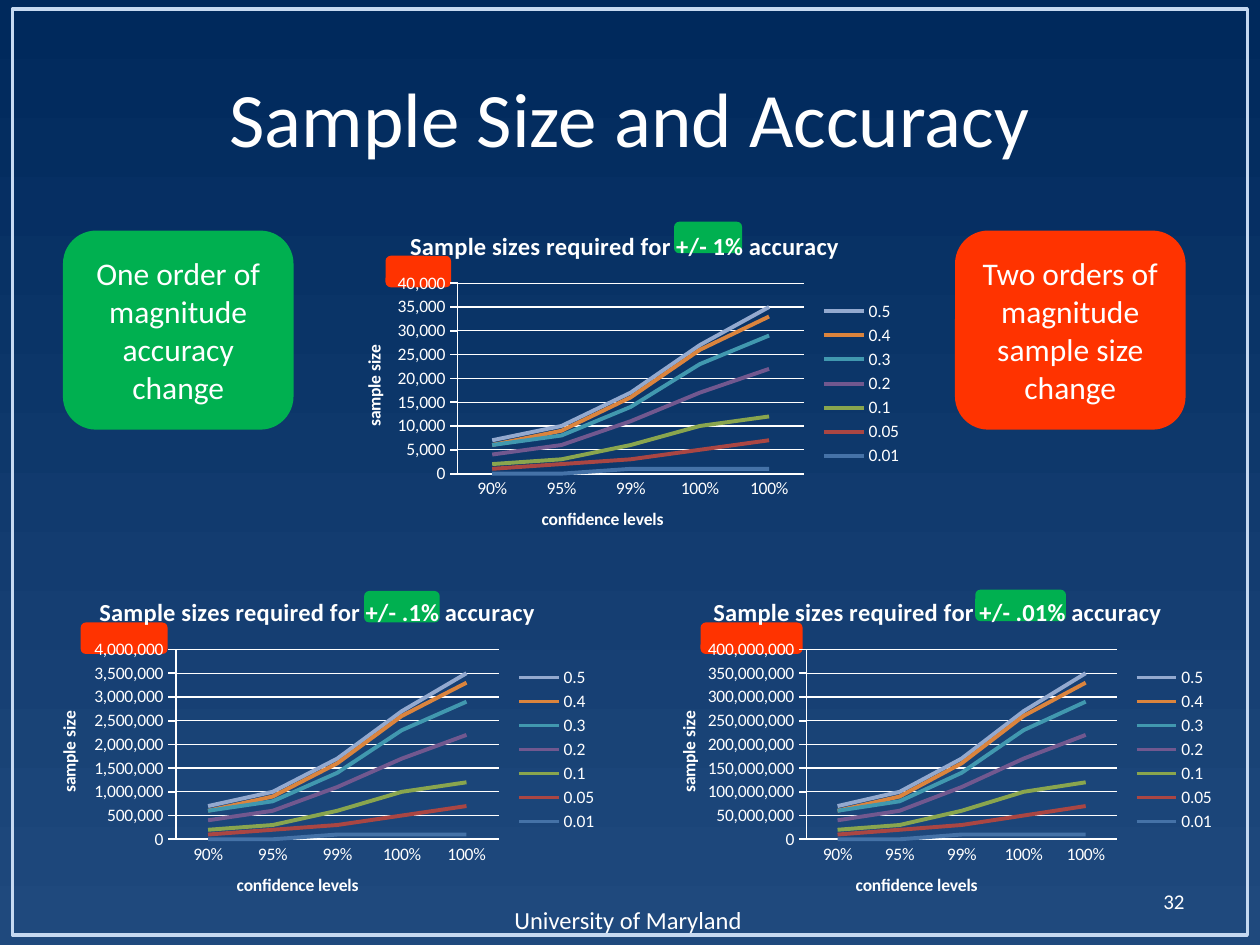
from lxml import etree
from pptx import Presentation, util as u
from pptx.chart import data as cd
from pptx.dml.color import RGBColor
from pptx.enum import chart as ch, shapes as sh, text as tx
from pptx.oxml import parse_xml
from pptx.oxml.ns import nsdecls, qn

WHITE = RGBColor(0xFF, 0xFF, 0xFF)
GREEN = RGBColor(0x00, 0xB0, 0x50)
RED = RGBColor(0xFF, 0x33, 0x00)
FRAME = RGBColor(0xC6, 0xD9, 0xF1)
LIGHT = RGBColor(0x1F, 0x49, 0x7D)
DARK = RGBColor(0x00, 0x29, 0x5C)
FONT = "Calibri"

deck = Presentation()
deck.slide_width, deck.slide_height = u.Inches(10), u.Inches(7.5)
cell = deck.slide_width // 10
slide = deck.slides.add_slide(deck.slide_layouts[6])
back = slide.background.fill
back.gradient()
back.gradient_angle = 90
for stop, tone in zip(back.gradient_stops, (LIGHT, DARK)):
    stop.color.rgb = tone


def label(shape, words, size, align, wrap=True):
    frame = shape.text_frame
    frame.text = words
    frame.word_wrap = wrap
    frame.vertical_anchor = tx.MSO_ANCHOR.MIDDLE
    para = frame.paragraphs[0]
    para.alignment = align
    font = para.runs[0].font
    font.name, font.size, font.color.rgb = FONT, u.Pt(size), WHITE


def place(node, index, **share):
    old = node.find(qn("c:layout"))
    if old is not None:
        node.remove(old)
    layout = etree.Element(qn("c:layout"))
    manual = etree.SubElement(layout, qn("c:manualLayout"))
    if "inner" in share:
        etree.SubElement(manual, qn("c:layoutTarget")).set("val", share.pop("inner"))
    for side in "xy":
        etree.SubElement(manual, qn(f"c:{side}Mode")).set("val", "edge")
    for key, val in share.items():
        etree.SubElement(manual, qn(f"c:{key}")).set("val", f"{val:.2f}")
    node.insert(index, layout)


frame = slide.shapes.add_shape(sh.MSO_SHAPE.RECTANGLE, *[int(cell * n) for n in (0.1, 0.07, 9.8, 7.35)])
frame.shadow.inherit = False
frame.fill.background()
frame.line.color.rgb, frame.line.width = FRAME, u.Pt(2)

MID, RIGHT = tx.PP_ALIGN.CENTER, tx.PP_ALIGN.RIGHT
for words, size, align, wrap, spot in (
    ("University of Maryland", 14, MID, False, (3.97, 7.13, 2.03, 0.34)),
    ("Sample Size and Accuracy", 44, MID, True, (0.5, 0.3, 9, 1.25)),
    ("32", 12, RIGHT, True, (7.17, 6.95, 2.33, 0.4)),
):
    label(slide.shapes.add_textbox(*[int(cell * n) for n in spot]), words, size, align, wrap)

for tone, left, top, wide, high, words in (
    (RED, 3.06, 2.03, 0.52, 0.25, ""),
    (RED, 0.64, 4.94, 0.69, 0.25, ""),
    (RED, 5.56, 4.94, 0.81, 0.25, ""),
    (GREEN, 7.74, 4.68, 0.72, 0.25, ""),
    (GREEN, 2.89, 4.69, 0.6, 0.25, ""),
    (GREEN, 5.35, 1.76, 0.54, 0.25, ""),
    (GREEN, 0.5, 1.83, 1.83, 1.58, "One order of magnitude accuracy change"),
    (RED, 7.58, 1.83, 1.83, 1.58, "Two orders of magnitude sample size change"),
):
    spot = [int(cell * n) for n in (left, top, wide, high)]
    box = slide.shapes.add_shape(sh.MSO_SHAPE.ROUNDED_RECTANGLE, *spot)
    box.shadow.inherit = False
    box.fill.solid()
    box.fill.fore_color.rgb = tone
    box.line.fill.background()
    if words:
        label(box, words, 18, MID)

LEVELS = (0.9, 0.95, 0.99, 0.999, 0.9998)
CURVES = (
    ("0.5", RGBColor(0x93, 0xA9, 0xCF), (7, 10, 17, 27, 35)),
    ("0.4", RGBColor(0xDB, 0x84, 0x3D), (6, 9, 16, 26, 33)),
    ("0.3", RGBColor(0x41, 0x98, 0xAF), (6, 8, 14, 23, 29)),
    ("0.2", RGBColor(0x71, 0x58, 0x8F), (4, 6, 11, 17, 22)),
    ("0.1", RGBColor(0x89, 0xA5, 0x4E), (2, 3, 6, 10, 12)),
    ("0.05", RGBColor(0xAA, 0x46, 0x43), (1, 2, 3, 5, 7)),
    ("0.01", RGBColor(0x45, 0x72, 0xA7), (0, 0, 1, 1, 1)),
)
for error, scale, head, start, spot in (
    ("1%", 1000, 0.12, 0.21, (2.67, 1.67, 4.58, 2.75)),
    (".1%", 100000, 0.11, 0.25, (0.25, 4.58, 4.58, 2.74)),
    (".01%", 10000000, 0.1, 0.27, (5.17, 4.58, 4.56, 2.74)),
):
    data = cd.CategoryChartData(number_format="#,##0")
    data.categories = LEVELS
    data.categories.number_format = "0%"
    for name, tone, sizes in CURVES:
        data.add_series(name, [n * scale for n in sizes])
    spot = [int(cell * n) for n in spot]
    chart = slide.shapes.add_chart(ch.XL_CHART_TYPE.LINE, *spot, data).chart
    chart.font.name, chart.font.size, chart.font.color.rgb = FONT, u.Pt(10), WHITE
    chart.has_title = chart.has_legend = True
    chart.legend.position = ch.XL_LEGEND_POSITION.RIGHT
    chart.legend.include_in_layout = False

    cats, vals = chart.category_axis, chart.value_axis
    cats.major_tick_mark = ch.XL_TICK_MARK.NONE
    vals.major_tick_mark = ch.XL_TICK_MARK.OUTSIDE
    vals.minimum_scale, vals.maximum_scale, vals.major_unit = 0, 40 * scale, 5 * scale
    vals.has_major_gridlines = True
    for axis, form in ((cats, "0%"), (vals, "#,##0")):
        axis.tick_labels.number_format = form
        axis.tick_labels.number_format_is_linked = False
        axis.format.line.color.rgb, axis.format.line.width = WHITE, u.Pt(1)
    grid = vals.major_gridlines.format.line
    grid.color.rgb, grid.width = WHITE, u.Pt(0.75)

    for owner, words, size, x, y in (
        (chart.chart_title, f"Sample sizes required for +/- {error} accuracy", 14, head, 0.04),
        (cats.axis_title, "confidence levels", 10, 0.35, 0.85),
        (vals.axis_title, "sample size", 10, 0.04, 0.38),
    ):
        owner.text_frame.text = words
        font = owner.text_frame.paragraphs[0].runs[0].font
        font.name, font.size, font.bold, font.color.rgb = FONT, u.Pt(size), True, WHITE
        place(owner.text_frame._txBody.getparent().getparent(), 1, x=x, y=y)

    for line, (name, tone, sizes) in zip(chart.plots[0].series, CURVES):
        line.smooth = False
        line.format.line.color.rgb, line.format.line.width = tone, u.Pt(2.25)
    chart.plots[0].vary_by_categories = False

    root = chart._chartSpace.find(qn("c:chart"))
    area = root.find(qn("c:plotArea"))
    place(area, 0, inner="inner", x=start, y=0.21, w=0.81 - start, h=0.55)
    place(root.find(qn("c:legend")), 1, x=0.83, y=0.25, w=0.16, h=0.5)
    clear = f"<c:spPr {nsdecls('c', 'a')}><a:noFill/><a:ln><a:noFill/></a:ln></c:spPr>"
    area.append(parse_xml(clear))
    root.addnext(parse_xml(clear))

deck.save("out.pptx")
